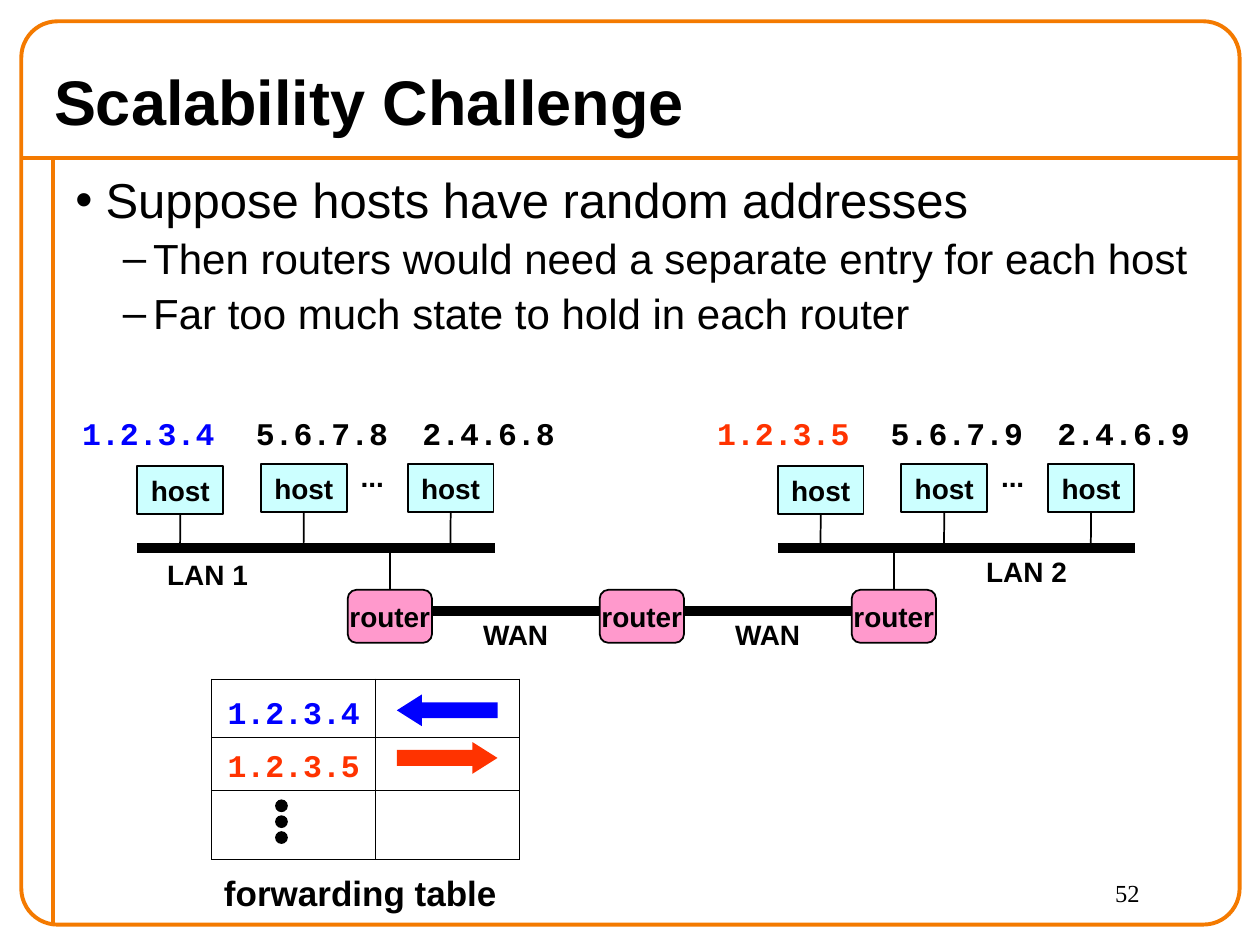
from lxml.etree import SubElement
from pptx import Presentation
from pptx.dml.color import RGBColor
from pptx.enum.shapes import MSO_CONNECTOR, MSO_SHAPE as Kind
from pptx.enum.text import MSO_ANCHOR as Anchor, PP_ALIGN as Align
from pptx.oxml.ns import qn
from pptx.util import Cm, Pt

BLACK = RGBColor(0, 0, 0)
ORANGE = RGBColor(0xF4, 0x7A, 0x00)
BLUE = RGBColor(0, 0, 0xFF)
RED = RGBColor(0xFF, 0x33, 0x00)
CYAN = RGBColor(0xCC, 0xFF, 0xFF)
PINK = RGBColor(0xFF, 0x99, 0xCC)
MONO = "Courier New"

deck = Presentation()
deck.slide_width, deck.slide_height = Cm(25.4), Cm(19.05)
slide = deck.slides.add_slide(deck.slide_layouts[6])
shapes = slide.shapes


def line(x1, y1, x2, y2, width=1, color=BLACK):
    wire = shapes.add_connector(MSO_CONNECTOR.STRAIGHT, Cm(x1), Cm(y1), Cm(x2), Cm(y2))
    wire.line.color.rgb = color
    wire.line.width = Pt(width)
    SubElement(wire.element.spPr, qn("a:effectLst"))
    return wire


def put(kind, x, y, w, h, text="", size=16, font="Arial", color=BLACK, bold=True,
        align=Align.CENTER, anchor=Anchor.MIDDLE, fill=None, edge=None, width=1):
    """Add a preset shape, or a text box when kind is None."""
    place = Cm(x), Cm(y), Cm(w), Cm(h)
    if kind is None:
        shape = shapes.add_textbox(*place)
    else:
        shape = shapes.add_shape(kind, *place)
        shape.shadow.inherit = False
        if fill is None:
            shape.fill.background()
        else:
            shape.fill.solid()
            shape.fill.fore_color.rgb = fill
        if edge is None:
            shape.line.fill.background()
        else:
            shape.line.color.rgb = edge
            shape.line.width = Pt(width)
    if text:
        frame = shape.text_frame
        frame.text = text
        frame.word_wrap = False
        frame.vertical_anchor = anchor
        for para in frame.paragraphs:
            para.alignment = align
            face = para.runs[0].font
            face.name, face.size, face.bold = font, Pt(size), bold
            face.color.rgb = color
    return shape


# Slide frame, page number and title
line(0.43, 3.18, 24.97, 3.18, 2.25, ORANGE)
line(1.07, 3.18, 1.07, 18.62, 2.25, ORANGE)
frame = put(Kind.ROUNDED_RECTANGLE, 0.43, 0.43, 24.56, 18.21, edge=ORANGE, width=2.25)
frame.adjustments[0] = 0.04
put(None, 22.23, 17.58, 2.54, 1.07, "52", 14, "Times New Roman", bold=False,
    align=Align.LEFT, anchor=Anchor.TOP)
put(None, 0.84, 1.07, 24.13, 1.9, "Scalability Challenge", 36, align=Align.LEFT)

# Bullets
points = [
    ("•", 0, 28, 0.61, "Suppose hosts have random addresses"),
    ("–", 1, 24, 1.57, "Then routers would need a separate entry for each host"),
    ("–", 1, 24, 1.57, "Far too much state to hold in each router"),
]
body = put(None, 1.27, 3.3, 23.5, 4.75, "\n".join(point[-1] for point in points),
           bold=False, align=Align.LEFT, anchor=Anchor.TOP)
body.text_frame.word_wrap = True
for para, (mark, level, size, left, _) in zip(body.text_frame.paragraphs, points):
    para.level = level
    para.runs[0].font.size = Pt(size)
    para.space_before = Pt(2.4 * level)
    props = para._p.get_or_add_pPr()
    props.set("marL", str(Cm(left)))
    props.set("indent", str(-Cm(0.61)))
    SubElement(props, qn("a:buFont"), typeface="Arial")
    SubElement(props, qn("a:buChar"), char=mark)

# Two LANs: bus, hosts, addresses
BUS = 11.05
lans = [
    ("LAN 1", 3.12, 11.1, 2.77, 1.4, BLUE, ("1.2.3.4", "5.6.7.8", "2.4.6.8")),
    ("LAN 2", 19.63, 11.05, 15.68, 14.2, RED, ("1.2.3.5", "5.6.7.9", "2.4.6.9")),
]
hosts = [(0, 9.4, 0), (2.49, 9.35, 3.5), (5.45, 9.35, 6.86)]
for name, name_x, name_y, left, first, color, addrs in lans:
    line(left, BUS, left + 7.2, BUS, 6)
    for (dx, y, shift), addr in zip(hosts, addrs):
        x = left + dx
        host = put(Kind.RECTANGLE, x, y, 1.73, 0.97, "host", fill=CYAN, edge=BLACK)
        drop = line(x + 0.86, y + 0.97, x + 0.86, BUS)
        drop.begin_connect(host, 2)
        put(None, first + shift, 8.23, 3.18, 1.02, addr, 18, MONO,
            color if addr == addrs[0] else BLACK, anchor=Anchor.TOP)
    put(None, name_x, name_y, 2.13, 0.94, name)
    put(None, left + 4.24, 9.14, 0.99, 0.94, "...")

# Routers and the WAN links between them
STEP, WIDE, TOP = 5.08, 1.7, 11.89
for i in range(3):
    x = 7.01 + i * STEP
    router = put(Kind.ROUNDED_RECTANGLE, x, TOP, WIDE, 1.07, "router", fill=PINK, edge=BLACK)
    if i != 1:
        drop = line(x + WIDE / 2, BUS, x + WIDE / 2, TOP)
        drop.end_connect(router, 0)
    if i < 2:
        line(x + WIDE, 12.32, x + STEP, 12.32, 6)
        put(None, x + 2.46, 12.32, 1.85, 0.94, "WAN")

# Forwarding table
rows = [("1.2.3.4", BLUE, 1.17), ("1.2.3.5", RED, 1.07), ("", BLACK, 1.4)]
table = shapes.add_table(3, 2, Cm(4.27), Cm(13.69), Cm(6.2), Cm(3.64)).table
table.first_row = table.horz_banding = False
table.columns[0].width, table.columns[1].width = Cm(3.3), Cm(2.9)
for row, (addr, color, high) in zip(table.rows, rows):
    row.height = Cm(high)
    for cell in row.cells:
        props = cell._tc.get_or_add_tcPr()
        for side in ("a:lnL", "a:lnR", "a:lnT", "a:lnB"):
            edge = SubElement(props, qn(side), w=str(Pt(0.75)))
            SubElement(SubElement(edge, qn("a:solidFill")), qn("a:srgbClr"), val=str(BLACK))
        cell.fill.background()
        cell.vertical_anchor = Anchor.BOTTOM
        cell.margin_bottom = Cm(0.06)
    if addr:
        para = row.cells[0].text_frame.paragraphs[0]
        para.text = addr
        para.alignment = Align.CENTER
        face = para.runs[0].font
        face.name, face.size, face.bold = MONO, Pt(18), True
        face.color.rgb = color

for kind, y, color in [(Kind.LEFT_ARROW, 14, BLUE), (Kind.RIGHT_ARROW, 14.96, RED)]:
    arrow = put(kind, 8, y, 2.03, 0.64, fill=color)
    arrow.adjustments[1] = 0.79
for i in range(3):
    put(Kind.OVAL, 5.56, 16.13 + i * 0.32, 0.23, 0.23, fill=BLACK, edge=BLACK, width=0.75)
put(None, 3.97, 17.45, 6.59, 1.09, "forwarding table", 20, anchor=Anchor.TOP)

deck.save("out.pptx")
